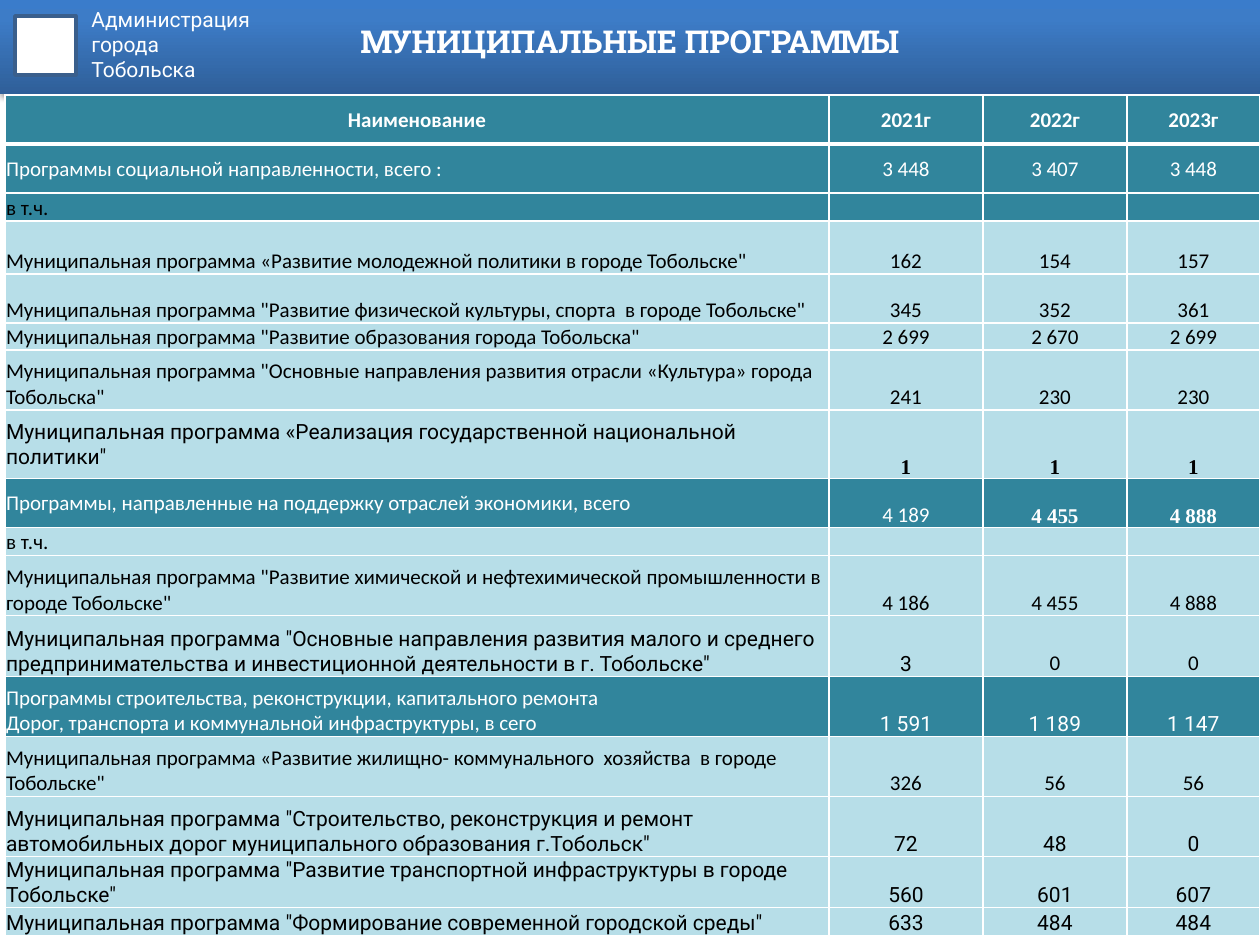
from dataclasses import dataclass

from lxml import etree
from pptx import Presentation
from pptx.dml.color import RGBColor
from pptx.enum.shapes import MSO_SHAPE
from pptx.enum.text import MSO_ANCHOR, PP_ALIGN
from pptx.oxml import parse_xml
from pptx.oxml.ns import nsdecls
from pptx.util import Emu, Pt

RECTANGLE = MSO_SHAPE.RECTANGLE
LEFT, CENTER = PP_ALIGN.LEFT, PP_ALIGN.CENTER
MIDDLE, BOTTOM = MSO_ANCHOR.MIDDLE, MSO_ANCHOR.BOTTOM
PX = 914400 / 126


@dataclass(frozen=True)
class Theme:
    white: str = "FFFFFF"
    black: str = "000000"
    dark: str = "31859C"
    light: str = "B7DEE8"
    emblem_line: str = "3A5F8C"
    banner_stops: tuple = ((0, "2F5F99"), (80, "3D7CC7"), (100, "3A7CCB"))
    body: str = "Calibri"
    label: str = "Roboto"
    title: str = "Roboto Slab"
    serif: str = "Times New Roman"
    body_size: int = 12
    title_size: int = 18


THEME = Theme()


@dataclass(frozen=True)
class Row:
    height: int
    name: str
    values: tuple = ("", "", "")
    fill: str = THEME.light
    color: str = THEME.black
    name_font: str = THEME.body
    value_fonts: tuple = (THEME.body,) * 3
    name_anchor: MSO_ANCHOR = BOTTOM
    value_anchor: MSO_ANCHOR = BOTTOM
    header: bool = False


ROBOTO = (THEME.label,) * 3
SERIF = (THEME.serif,) * 3
COLUMNS = (824, 154, 144, 133)
ROWS = (
    Row(49, "Наименование", ("2021г", "2022г", "2023г"), THEME.dark, THEME.white,
        name_anchor=MIDDLE, value_anchor=MIDDLE, header=True),
    Row(49, "Программы социальной направленности, всего :", ("3 448", "3 407", "3 448"),
        THEME.dark, THEME.white, name_anchor=MIDDLE, value_anchor=MIDDLE),
    Row(28, "в т.ч.", fill=THEME.dark),
    Row(53, "Муниципальная программа «Развитие молодежной политики в городе Тобольске\"",
        ("162", "154", "157")),
    Row(49, "Муниципальная программа \"Развитие физической культуры, спорта  в городе Тобольске\"",
        ("345", "352", "361")),
    Row(27, "Муниципальная программа \"Развитие образования города Тобольска\"",
        ("2 699", "2 670", "2 699")),
    Row(60, "Муниципальная программа \"Основные направления развития отрасли «Культура» города Тобольска\"",
        ("241", "230", "230")),
    Row(69, "Муниципальная программа «Реализация государственной национальной политики\"",
        ("1", "1", "1"), name_font=THEME.label, value_fonts=SERIF, name_anchor=MIDDLE),
    Row(49, "Программы, направленные на поддержку отраслей экономики, всего",
        ("4 189", "4 455", "4 888"), THEME.dark, THEME.white,
        value_fonts=(THEME.body, THEME.serif, THEME.serif), name_anchor=MIDDLE),
    Row(28, "в т.ч.", name_anchor=MIDDLE),
    Row(60, "Муниципальная программа \"Развитие химической и нефтехимической промышленности в городе Тобольске\"",
        ("4 186", "4 455", "4 888")),
    Row(61, "Муниципальная программа \"Основные направления развития малого и среднего "
        "предпринимательства и инвестиционной деятельности в г. Тобольске\"",
        ("3", "0", "0"), name_font=THEME.label,
        value_fonts=(THEME.label, THEME.body, THEME.body)),
    Row(60, "Программы строительства, реконструкции, капитального ремонта\n"
        "Дорог, транспорта и коммунальной инфраструктуры, в сего",
        ("1 591", "1 189", "1 147"), THEME.dark, THEME.white, value_fonts=ROBOTO),
    Row(60, "Муниципальная программа «Развитие жилищно- коммунального  хозяйства  в городе Тобольске\"",
        ("326", "56", "56")),
    Row(60, "Муниципальная программа \"Строительство, реконструкция и ремонт автомобильных дорог "
        "муниципального образования г.Тобольск\"",
        ("72", "48", "0"), name_font=THEME.label, value_fonts=ROBOTO),
    Row(51, "Муниципальная программа \"Развитие транспортной инфраструктуры в городе Тобольске\"",
        ("560", "601", "607"), name_font=THEME.label, value_fonts=ROBOTO),
    Row(28, "Муниципальная программа \"Формирование современной городской среды\"",
        ("633", "484", "484"), name_font=THEME.label, value_fonts=ROBOTO),
)


def px(length: int) -> Emu:
    return Emu(round(length * PX))


def write_text(frame, text: str, *, font: str, color: str, size: int = THEME.body_size,
               bold: bool = False, align: PP_ALIGN = LEFT) -> None:
    for index, line in enumerate(text.split("\n")):
        paragraph = frame.add_paragraph() if index else frame.paragraphs[0]
        paragraph.alignment = align
        if not line:
            paragraph._p.append(parse_xml(
                f'<a:endParaRPr {nsdecls("a")} sz="{size * 100}">'
                f'<a:latin typeface="{font}"/></a:endParaRPr>'))
            continue
        run = paragraph.add_run()
        run.text = line
        run.font.name = font
        run.font.size = Pt(size)
        run.font.bold = bold
        run.font.color.rgb = RGBColor.from_string(color)


def add_rectangle(slide, left: int, top: int, width: int, height: int):
    shape = slide.shapes.add_shape(RECTANGLE, px(left), px(top), px(width), px(height))
    shape.shadow.inherit = False
    return shape


def add_banner(slide) -> None:
    banner = add_rectangle(slide, 0, 0, 1260, 94)
    banner.line.fill.background()
    banner.fill.gradient()
    gradient = banner.element.spPr.find("{*}gradFill")
    stops = "".join(
        f'<a:gs pos="{position * 1000}"><a:srgbClr val="{color}"/></a:gs>'
        for position, color in THEME.banner_stops)
    gradient.getparent().replace(gradient, parse_xml(
        f'<a:gradFill {nsdecls("a")} rotWithShape="1"><a:gsLst>{stops}</a:gsLst>'
        '<a:lin ang="16200000" scaled="0"/></a:gradFill>'))
    effects = banner.element.spPr.find("{*}effectLst")
    effects.append(parse_xml(
        f'<a:outerShdw {nsdecls("a")} blurRad="{Pt(3.1)}" dist="{Pt(1.8)}" dir="5400000" '
        f'rotWithShape="0"><a:srgbClr val="{THEME.black}"><a:alpha val="35000"/>'
        '</a:srgbClr></a:outerShdw>'))


def add_header(slide) -> None:
    add_banner(slide)
    emblem = add_rectangle(slide, 15, 16, 61, 59)
    emblem.fill.solid()
    emblem.fill.fore_color.rgb = RGBColor.from_string(THEME.white)
    emblem.line.color.rgb = RGBColor.from_string(THEME.emblem_line)
    emblem.line.width = Pt(2)
    label = slide.shapes.add_textbox(px(79), px(0), px(295), px(115))
    label.text_frame.word_wrap = True
    write_text(label.text_frame, "Администрация\nгорода\nТобольска",
               font=THEME.label, color=THEME.white)
    title = slide.shapes.title
    title.left, title.top, title.width, title.height = px(256), px(0), px(748), px(89)
    title.text_frame.vertical_anchor = MIDDLE
    title.text_frame.margin_top = 0
    title.text_frame.margin_bottom = px(8)
    write_text(title.text_frame, "МУНИЦИПАЛЬНЫЕ ПРОГРАММЫ", font=THEME.title,
               color=THEME.white, size=THEME.title_size, bold=True, align=CENTER)
    label.element.addnext(title.element)


def set_borders(cell, top: int, bottom: int) -> None:
    properties = cell._tc.get_or_add_tcPr()
    widths = {"lnL": 1, "lnR": 1, "lnT": top, "lnB": bottom}
    for index, (side, width) in enumerate(widths.items()):
        line = parse_xml(f'<a:{side} {nsdecls("a")} w="{Pt(width)}"/>')
        solid = etree.SubElement(line, line.tag.replace(side, "solidFill"))
        etree.SubElement(solid, line.tag.replace(side, "srgbClr"), val=THEME.white)
        properties.insert(index, line)


def fill_cell(cell, text: str, row: Row, font: str, anchor: MSO_ANCHOR,
              align: PP_ALIGN) -> None:
    cell.margin_left = cell.margin_right = cell.margin_top = px(1)
    cell.margin_bottom = 0
    cell.vertical_anchor = anchor
    cell.fill.solid()
    cell.fill.fore_color.rgb = RGBColor.from_string(row.fill)
    write_text(cell.text_frame, text, font=font, color=row.color, align=align,
               bold=row.header or font == THEME.serif)


def add_program_table(slide) -> None:
    height = sum(row.height for row in ROWS)
    table = slide.shapes.add_table(len(ROWS), len(COLUMNS), px(5), px(95),
                                   px(sum(COLUMNS)), px(height)).table
    table.first_row = table.horz_banding = False
    for column, width in zip(table.columns, COLUMNS):
        column.width = px(width)
    for row_index, row in enumerate(ROWS):
        table.rows[row_index].height = px(row.height)
        fill_cell(table.cell(row_index, 0), row.name, row, row.name_font, row.name_anchor,
                  CENTER if row.header else LEFT)
        for index, (value, font) in enumerate(zip(row.values, row.value_fonts), 1):
            fill_cell(table.cell(row_index, index), value, row, font, row.value_anchor, CENTER)
        for index in range(len(COLUMNS)):
            set_borders(table.cell(row_index, index), top=3 if row_index == 1 else 1,
                        bottom=3 if row.header else 1)


def main() -> None:
    presentation = Presentation()
    presentation.slide_width, presentation.slide_height = px(1260), px(945)
    slide = presentation.slides.add_slide(presentation.slide_layouts[5])
    add_header(slide)
    add_program_table(slide)
    presentation.save("out.pptx")


if __name__ == "__main__":
    main()
